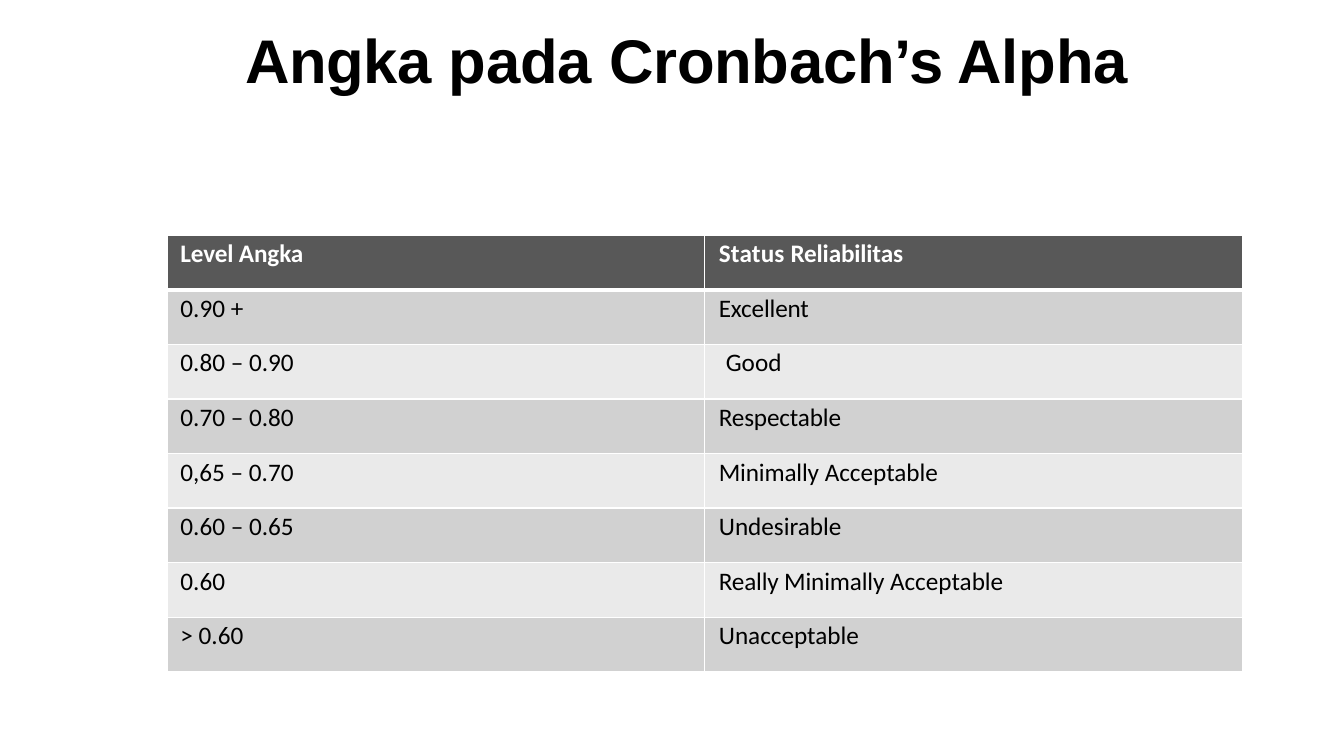
from lxml import etree
from pptx import Presentation
from pptx import util as u
from pptx.dml.color import RGBColor
from pptx.enum import text
from pptx.oxml.ns import qn

COLORS = {
    "white": "FFFFFF",
    "black": "000000",
    "header": "585858",
    "odd": "D1D1D1",
    "even": "EAEAEA",
}
TITLE = [("Angka ", -0.3), ("pada ", -0.1), ("Cronbach’s Alpha", -0.2)]
LEVELS = [
    ([("Level Angka", -0.1)], [("Status ", 0.1), ("Reliabilitas", -0.1)]),
    ([("0.90 +", 0)], [("Excellent", -0.1)]),
    ([("0.80 – 0.90", 0)], [("Good", 0)]),
    ([("0.70 – 0.80", 0)], [("Respectable", -0.1)]),
    ([("0,65 – 0.70", 0)], [("Minimally", -0.1), (" Acceptable", 0)]),
    ([("0.60 – 0.65", 0)], [("Undesirable", 0)]),
    ([("0.60", 0)], [("Really Minimally ", -0.1), ("Acceptable", 0)]),
    ([("> 0.60", 0)], [("Unacceptable", 0)]),
]
GOOD_ROW = 2


class SlideBuilder:
    title_font = {"name": "Arial", "size": u.Pt(44), "bold": True}
    table_font = {"name": "Calibri", "size": u.Pt(18)}

    def __init__(self, slide):
        self.slide = slide

    def apply(self, target, values):
        for name, value in values.items():
            setattr(target, name, value)

    def add_runs(self, frame, runs, font, color, before):
        paragraph = frame.paragraphs[0]
        paragraph.space_before = u.Pt(before)
        for words, spacing in runs:
            run = paragraph.add_run()
            run.text = words
            self.apply(run.font, font)
            run.font.color.rgb = RGBColor.from_string(COLORS[color])
            run.font._element.set("spc", str(round(spacing * 100)))

    def title(self, runs, left, top, width, height):
        box = self.slide.shapes.add_textbox(*map(u.Pt, (left, top, width, height)))
        self.apply(box.text_frame, {
            "word_wrap": True,
            "auto_size": text.MSO_AUTO_SIZE.SHAPE_TO_FIT_TEXT,
            "margin_left": u.Pt(0.7),
            "margin_top": u.Pt(0.9),
            "margin_right": 0,
            "margin_bottom": 0,
        })
        self.add_runs(box.text_frame, runs, self.title_font, "black", 0.9)

    def border(self, cell, side, width):
        properties = cell._tc.get_or_add_tcPr()
        line = etree.SubElement(properties, qn(f"a:ln{side}"), w=str(u.Pt(width)))
        fill = etree.SubElement(line, qn("a:solidFill"))
        etree.SubElement(fill, qn("a:srgbClr"), val=COLORS["white"])

    def cell(self, cell, runs, row, indent):
        header = row == 0
        widths = {"L": 1, "R": 1, "T": 3 if row == 1 else 1, "B": 3 if header else 1}
        for side, width in widths.items():
            self.border(cell, side, width)
        cell.fill.solid()
        fill = "header" if header else "odd" if row % 2 else "even"
        cell.fill.fore_color.rgb = RGBColor.from_string(COLORS[fill])
        self.apply(cell, {
            "margin_left": u.Pt(indent),
            "margin_top": u.Pt(2.6),
            "margin_right": 0,
            "margin_bottom": 0,
        })
        font = {**self.table_font, "bold": header}
        self.add_runs(cell.text_frame, runs, font, "white" if header else "black", 2.7)

    def table(self, rows, left, top, width, height):
        frame = self.slide.shapes.add_table(
            len(rows), len(rows[0]), *map(u.Pt, (left, top, width, height)))
        for row, contents in enumerate(rows):
            for column, runs in enumerate(contents):
                indent = 9.4 if column == 0 else 15 if row == GOOD_ROW else 10
                self.cell(frame.table.cell(row, column), runs, row, indent)


def main():
    presentation = Presentation()
    presentation.slide_width = u.Pt(960)
    presentation.slide_height = u.Pt(540)
    slide = presentation.slides.add_slide(presentation.slide_layouts[6])
    builder = SlideBuilder(slide)
    builder.title(TITLE, 174.5, 14.5, 636, 55)
    builder.table(LEVELS, 119.5, 168, 768, 312)
    presentation.save("out.pptx")


if __name__ == "__main__":
    main()
